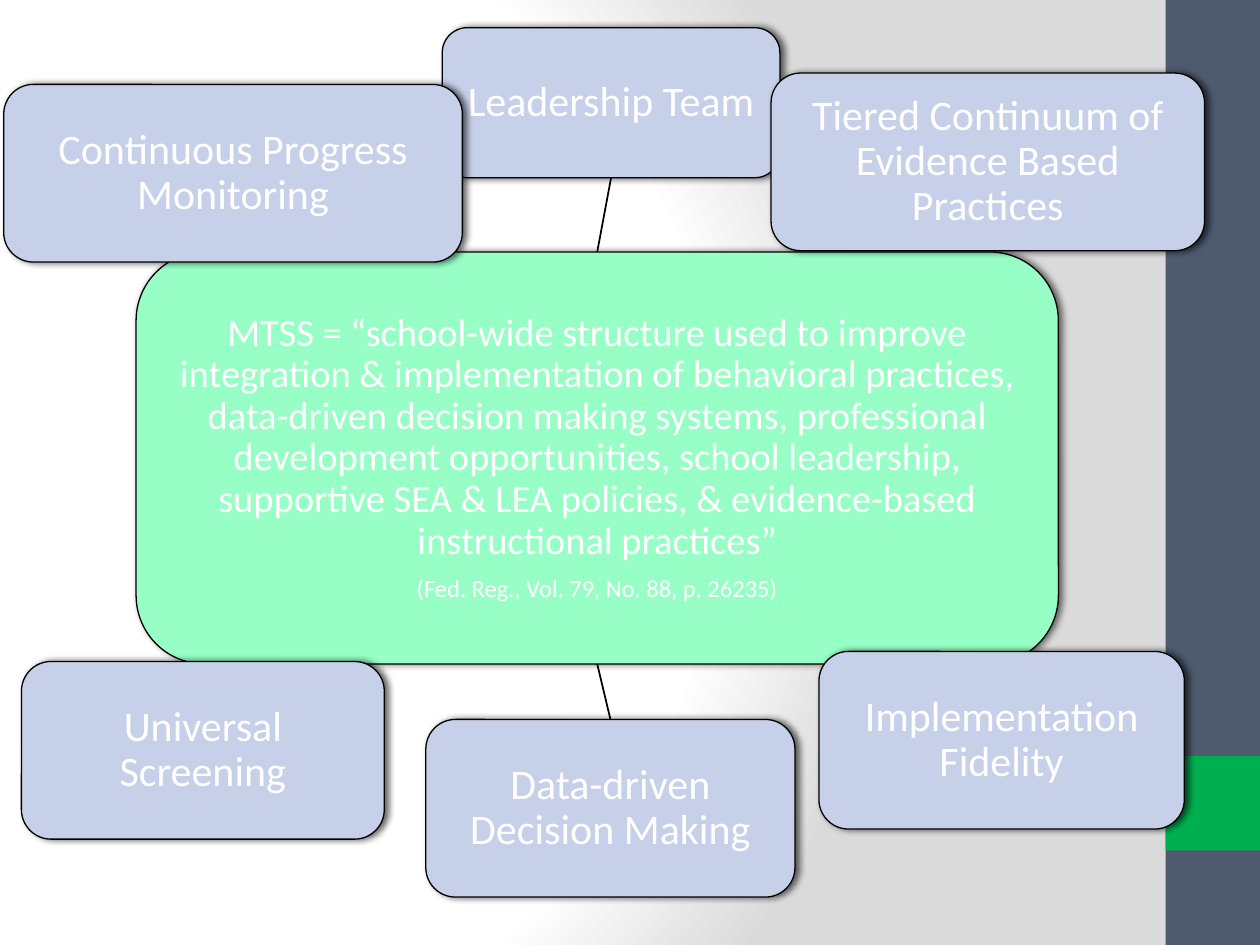
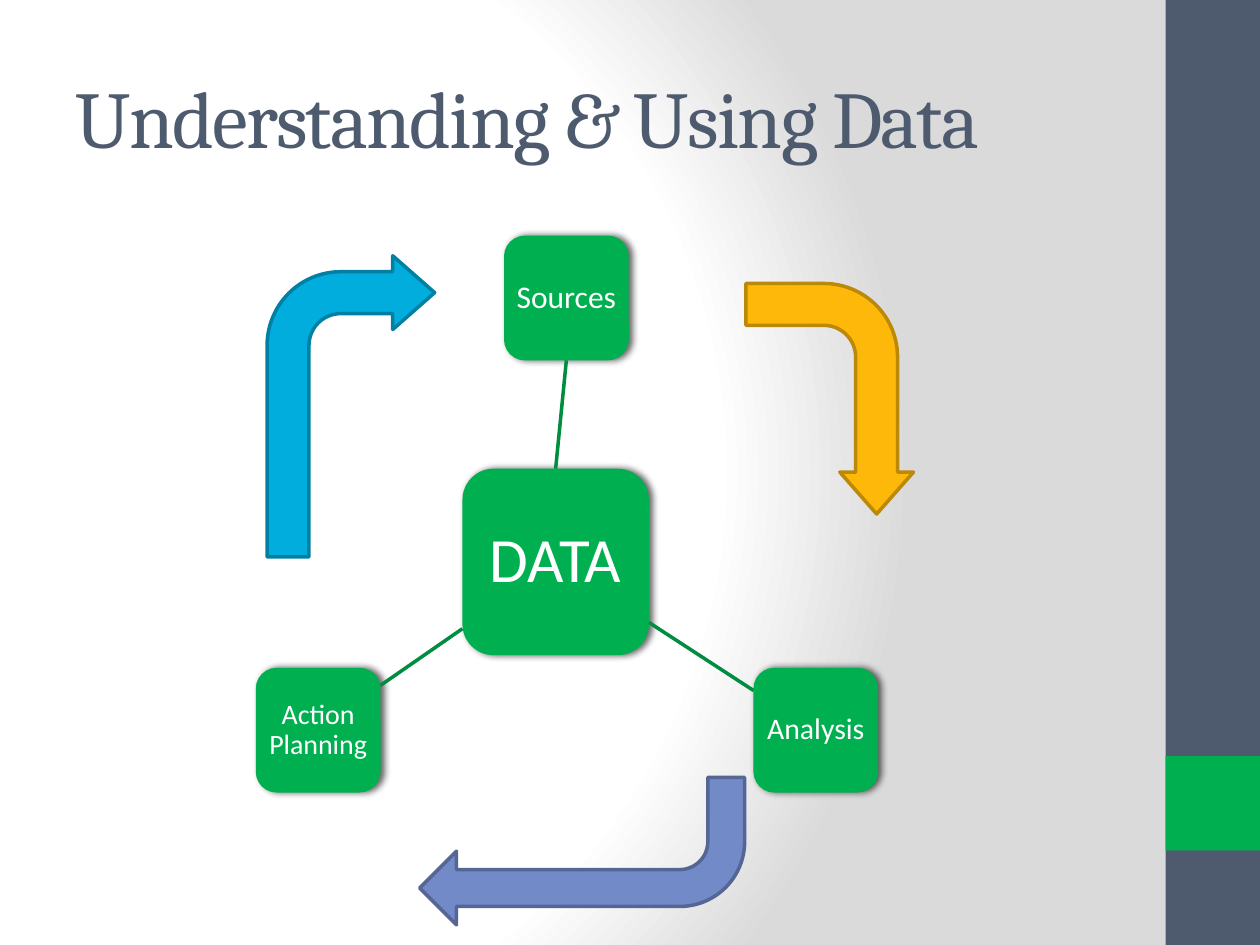
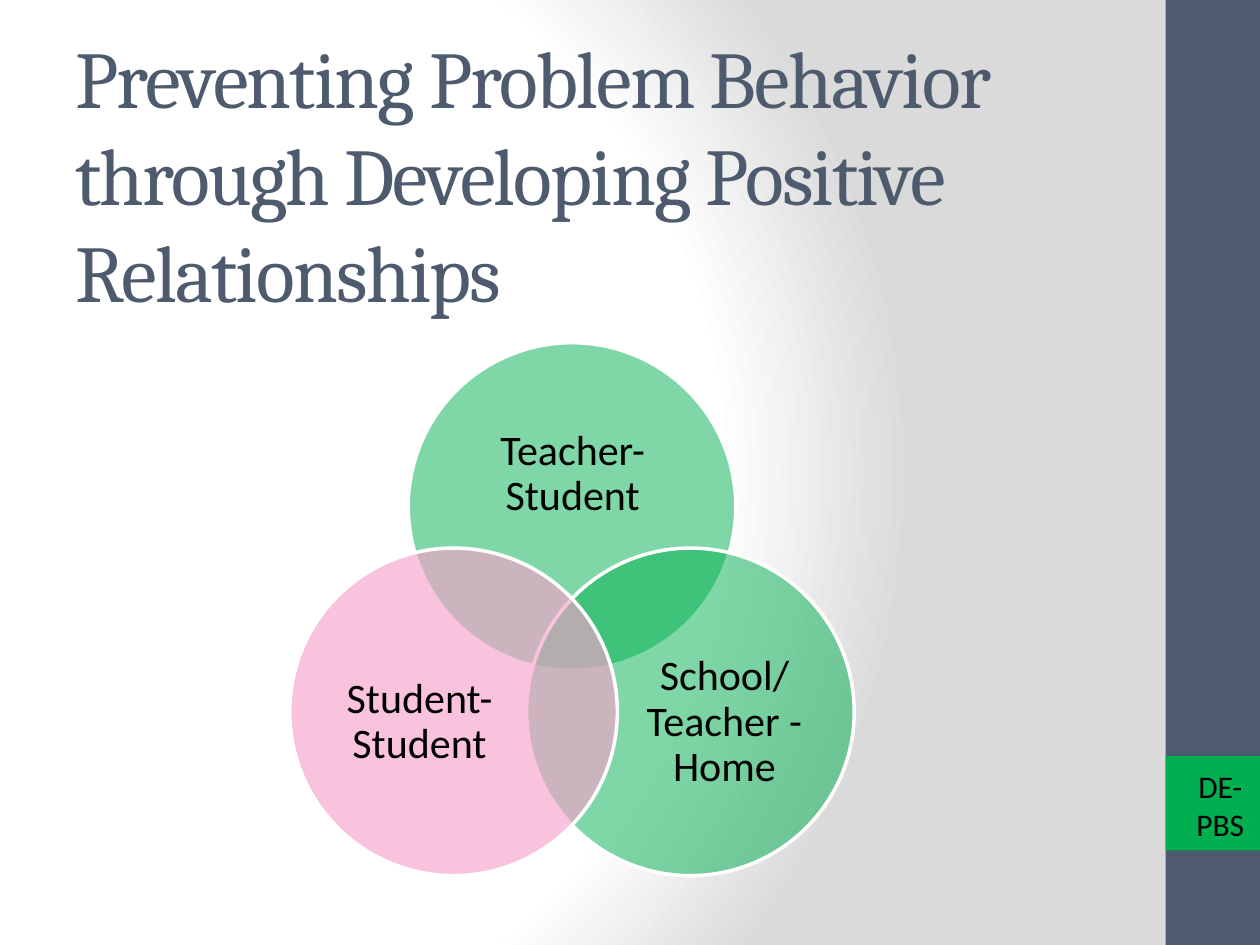
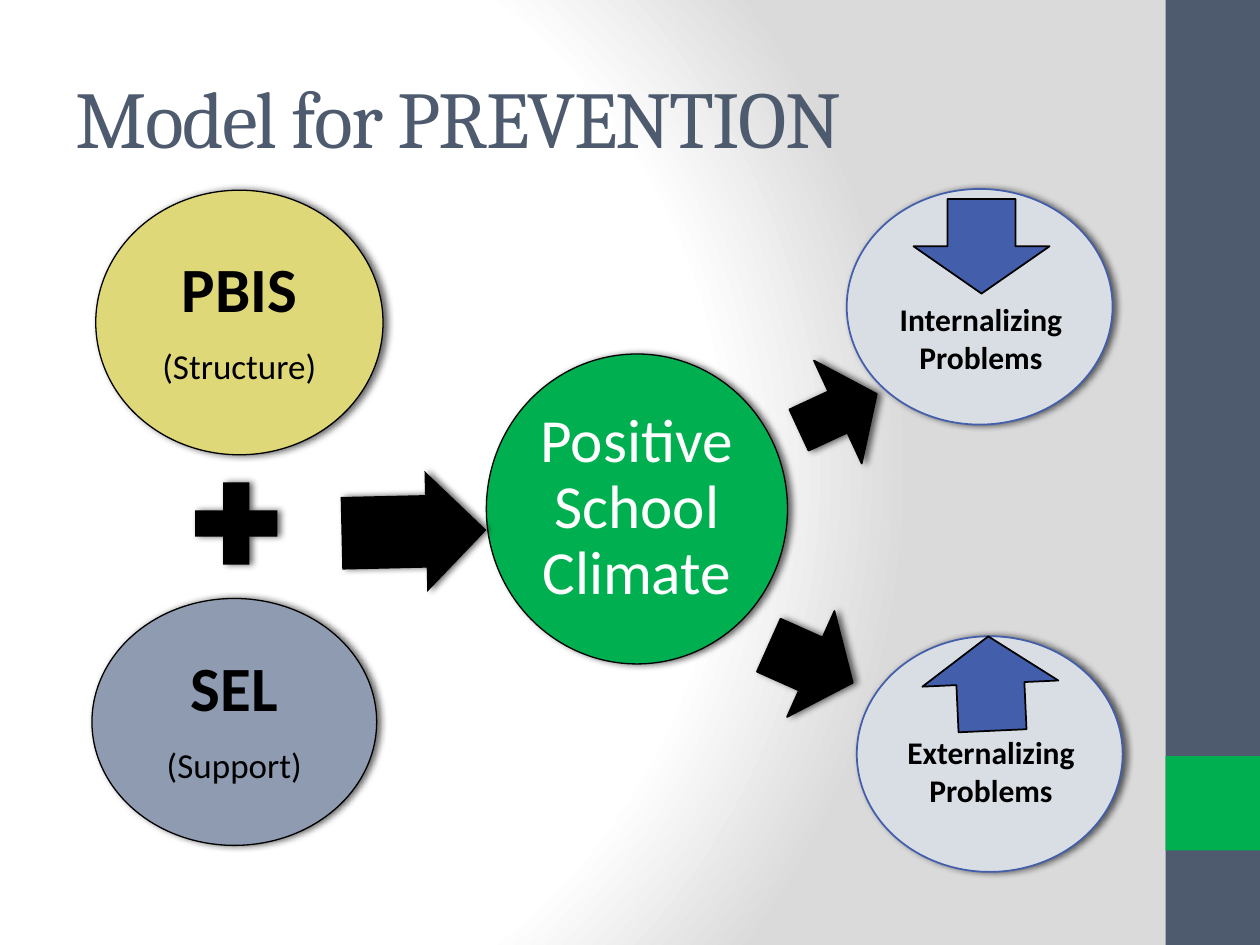
"""Build four slides on school-wide support, data, relationships and prevention."""
from pptx import Presentation
from pptx.dml.color import RGBColor
from pptx.enum.shapes import MSO_CONNECTOR, MSO_SHAPE
from pptx.enum.text import MSO_ANCHOR, MSO_AUTO_SIZE, PP_ALIGN
from pptx.oxml import parse_xml
from pptx.oxml.ns import nsdecls, qn
from pptx.util import Inches, Pt
from lxml.etree import SubElement

HUES = {
    "white": "FFFFFF", "black": "000000", "gray": "DADADA", "slate": "4E5B6F",
    "green": "00B050", "forest": "008D40", "mint": "97FFC6", "pale": "C7D0E9",
    "pink": "F7A1CA", "gold": "FEB80A", "bronze": "BC8807", "mauve": "738AC8",
    "dusk": "556694", "sky": "00ADDC", "teal": "0080A3", "straw": "DFD878",
    "steel": "8E9BB0", "mist": "D9DEE5", "blue": "435EAA",
}
TONES = {name: RGBColor.from_string(code) for name, code in HUES.items()}


def put(shape, text, size=18, hue="black", face="Calibri", bold=False,
        align=PP_ALIGN.CENTER, anchor=MSO_ANCHOR.MIDDLE, inset=None,
        lead=0.9, track=0):
    """Add one formatted paragraph to a shape."""
    frame = shape.text_frame
    frame.word_wrap = True
    frame.auto_size = MSO_AUTO_SIZE.NONE
    frame.vertical_anchor = anchor
    if inset is not None:
        frame.margin_left = frame.margin_right = Inches(inset)
        frame.margin_top = frame.margin_bottom = Inches(inset)
    para = frame.paragraphs[0]
    if frame.text:
        para.space_after = Pt(round(para.runs[0].font.size.pt * 0.35))
        para = frame.add_paragraph()
    para.alignment = align
    para.line_spacing = lead
    run = para.add_run()
    run.text = text
    font = run.font
    font.name, font.size, font.bold = face, Pt(size), bold
    font.color.rgb = TONES[hue]
    if track:
        shape.element.find(".//" + qn("a:rPr")).set("spc", str(track * 100))


def block(slide, kind, box, fill, line=None, width=0.75, shade=False,
          turn=0, bends=(), clear=None):
    """Add one filled shape, with an optional outline and shadow."""
    shape = slide.shapes.add_shape(kind, *map(Inches, box))
    shape.rotation = turn
    for spot, bend in enumerate(bends):
        shape.adjustments[spot] = bend
    shape.fill.solid()
    shape.fill.fore_color.rgb = TONES[fill]
    if clear:
        tint = shape.element.spPr.find(".//" + qn("a:srgbClr"))
        SubElement(tint, qn("a:alpha"), val=str(clear * 1000))
    if line:
        shape.line.color.rgb = TONES[line]
        shape.line.width = Pt(width)
    else:
        shape.line.fill.background()
    shape.shadow.inherit = False
    if shade:
        glow = SubElement(shape.element.spPr.find(qn("a:effectLst")), qn("a:outerShdw"),
                          blurRad=str(Pt(4)), dist=str(Pt(2)), dir="0", rotWithShape="0")
        tint = SubElement(glow, qn("a:srgbClr"), val=HUES["black"])
        SubElement(tint, qn("a:alpha"), val="60000")
    return shape


deck = Presentation()
deck.slide_width, deck.slide_height = Inches(10), Inches(7.5)
master = deck.slide_master
master.background.fill.gradient()
stops = "".join(f'<a:gs pos="{spot * 1000}"><a:srgbClr val="{HUES[hue]}"/></a:gs>'
                for spot, hue in [(0, "white"), (75, "white"), (100, "gray")])
plain = master.element.find(".//" + qn("a:gradFill"))
plain.getparent().replace(plain, parse_xml(
    f'<a:gradFill {nsdecls("a")} rotWithShape="1"><a:gsLst>{stops}</a:gsLst>'
    '<a:path path="circle"><a:fillToRect l="20000" t="50000" r="100000" b="50000"/>'
    '</a:path></a:gradFill>'))

slides = []
for title, top in [
    (None, 0),
    ("Understanding & Using Data", 0.3),
    ("Preventing Problem Behavior through Developing Positive Relationships", 0.75),
    ("Model for PREVENTION", 0.3),
]:
    slide = deck.slides.add_slide(deck.slide_layouts[5 if title else 6])
    slides.append(slide)
    if title:
        head = slide.shapes.title
        head.left, head.top = Inches(0.5), Inches(top)
        head.width, head.height = Inches(8.33), Inches(1.25)
        put(head, title, size=46, hue="slate", face="Cambria",
            align=PP_ALIGN.LEFT, lead=1, track=-1)
support, data, bonds, model = slides

for rank, (top, tall, hue) in enumerate([(0, 7.5, "slate"), (6, 0.75, "green")]):
    band = block(support, MSO_SHAPE.RECTANGLE, (9.25, top, 0.75, tall), hue)
    band.element.nvSpPr.cNvPr.set("id", str(100 + rank))
    master.placeholders[0].element.addprevious(band.element)

ROUND, OVAL = MSO_SHAPE.ROUNDED_RECTANGLE, MSO_SHAPE.OVAL
hub = block(support, ROUND, (1.08, 2, 7.32, 3.27), "mint", "black", shade=True)
put(hub, "MTSS = “school-wide structure used to improve integration & implementation "
    "of behavioral practices, data-driven decision making systems, professional "
    "development opportunities, school leadership, supportive SEA & LEA policies, "
    "& evidence-based instructional practices”", size=22, hue="white", inset=0.06)
put(hub, "(Fed. Reg., Vol. 79, No. 88, p. 26235)", size=14, hue="white", inset=0.06)
parts = {}
for text, left, top, wide, tall in [
    ("Leadership Team", 3.51, 0.22, 2.68, 1.19),
    ("Tiered Continuum of Evidence Based Practices", 6.12, 0.58, 3.44, 1.41),
    ("Implementation Fidelity", 6.5, 5.17, 2.9, 1.41),
    ("Data-driven Decision Making", 3.38, 5.71, 2.93, 1.41),
    ("Universal Screening", 0.17, 5.25, 2.88, 1.41),
    ("Continuous Progress Monitoring", 0.03, 0.67, 3.64, 1.41),
]:
    parts[text] = block(support, ROUND, (left, top, wide, tall), "pale", "black", shade=True)
    put(parts[text], text, size=24, hue="white", inset=0.07)

core = block(data, ROUND, (3.67, 3.72, 1.48, 1.48), "green", shade=True)
put(core, "DATA", size=36, hue="white", inset=0.1)
for text, left, top, size in [
    ("Sources", 4, 1.87, 18),
    ("Analysis", 5.98, 5.3, 17),
    ("Action Planning", 2.03, 5.3, 16),
]:
    parts[text] = block(data, ROUND, (left, top, 0.99, 0.99), "green", shade=True)
    put(parts[text], text, size=size, hue="white", inset=0.04)
for box, turn, bend, fill, line in [
    ((5.67, 2.5, 1.83, 1.33), 90, 0.22, "gold", "bronze"),
    ((3.33, 6.17, 2.58, 1.17), 180, 0.25, "mauve", "dusk"),
    ((2.12, 2.03, 1.33, 2.39), 0, 0.22, "sky", "teal"),
]:
    block(data, MSO_SHAPE.BENT_ARROW, box, fill, line, 2, turn=turn,
          bends=(0.25, bend, 0.25, 0.44))

for slide, ends, hue, width, start, stop in [
    (support, (4.74, 2, 4.85, 1.41), "black", 1, (hub, 0), (parts["Leadership Team"], 2)),
    (support, (4.74, 5.27, 4.85, 5.71), "black", 1,
     (hub, 2), (parts["Data-driven Decision Making"], 0)),
    (data, (4.41, 3.72, 4.5, 2.86), "forest", 2, (core, 0), (parts["Sources"], 2)),
    (data, (5.15, 4.94, 5.98, 5.48), "forest", 2, None, None),
    (data, (3.67, 4.99, 3.02, 5.44), "forest", 2, None, None),
]:
    wire = slide.shapes.add_connector(MSO_CONNECTOR.STRAIGHT, *map(Inches, ends))
    wire.line.color.rgb = TONES[hue]
    wire.line.width = Pt(width)
    SubElement(wire.element.spPr, qn("a:effectLst"))
    if start:
        wire.begin_connect(*start)
        wire.end_connect(*stop)

for text, left, top, fill, clear, spot in [
    ("Teacher-Student", 3.24, 2.72, "green", 50, (3.59, 3.18, 1.91, 1.17)),
    ("School/ Teacher - Home", 4.18, 4.35, "green", 50, (4.97, 5.02, 1.56, 1.43)),
    ("Student-Student", 2.3, 4.35, "pink", 64, (2.55, 5.02, 1.56, 1.43)),
]:
    block(bonds, OVAL, (left, top, 2.6, 2.6), fill, "white", 2, clear=clear)
    put(bonds.shapes.add_textbox(*map(Inches, spot)), text, size=24, inset=0)
put(bonds.shapes.add_textbox(*map(Inches, (9.37, 6.04, 0.63, 0.71))), "DE-PBS",
    anchor=MSO_ANCHOR.TOP, lead=1)

for text, note, box, fill in [
    ("PBIS", "(Structure)", (0.76, 1.51, 2.28, 2.1), "straw"),
    ("SEL", "(Support)", (0.73, 4.75, 2.26, 1.96), "steel"),
]:
    disc = block(model, OVAL, box, fill, "black", shade=True)
    put(disc, text, size=36, bold=True, inset=0.05)
    put(disc, note, size=20, inset=0.05)
block(model, MSO_SHAPE.MATH_PLUS, (1.43, 3.71, 0.89, 0.89), "black", shade=True)
goal = block(model, OVAL, (3.86, 2.81, 2.39, 2.46), "green", "black", shade=True)
put(goal, "Positive School Climate", size=35, hue="white", inset=0.05)
for box, turn, bend, line in [
    ((2.71, 3.74, 1.15, 0.96), 358.7, 0.6, None),
    ((6.31, 2.82, 0.68, 0.9), 335.1, 0.4, "black"),
    ((6.07, 4.81, 0.73, 0.92), 24.1, 0.5, "black"),
]:
    block(model, MSO_SHAPE.RIGHT_ARROW, box, "black", line, 1, shade=True,
          turn=turn, bends=(bend, 0.5))
for text, disc, arrow, turn, spot in [
    ("Internalizing Problems", (6.72, 1.5), (7.25, 1.58), 0, (6.99, 2.33, 1.59, 0.71)),
    ("Externalizing Problems", (6.8, 5.05), (7.32, 5.05), 177.4, (7.04, 5.77, 1.65, 0.71)),
]:
    block(model, OVAL, (*disc, 2.11, 1.87), "mist", "blue", 1, shade=True)
    block(model, MSO_SHAPE.DOWN_ARROW, (*arrow, 1.08, 0.75), "blue", "black", 1, turn=turn)
    put(model.shapes.add_textbox(*map(Inches, spot)), text, bold=True,
        anchor=MSO_ANCHOR.TOP, lead=1)

deck.save("out.pptx")
